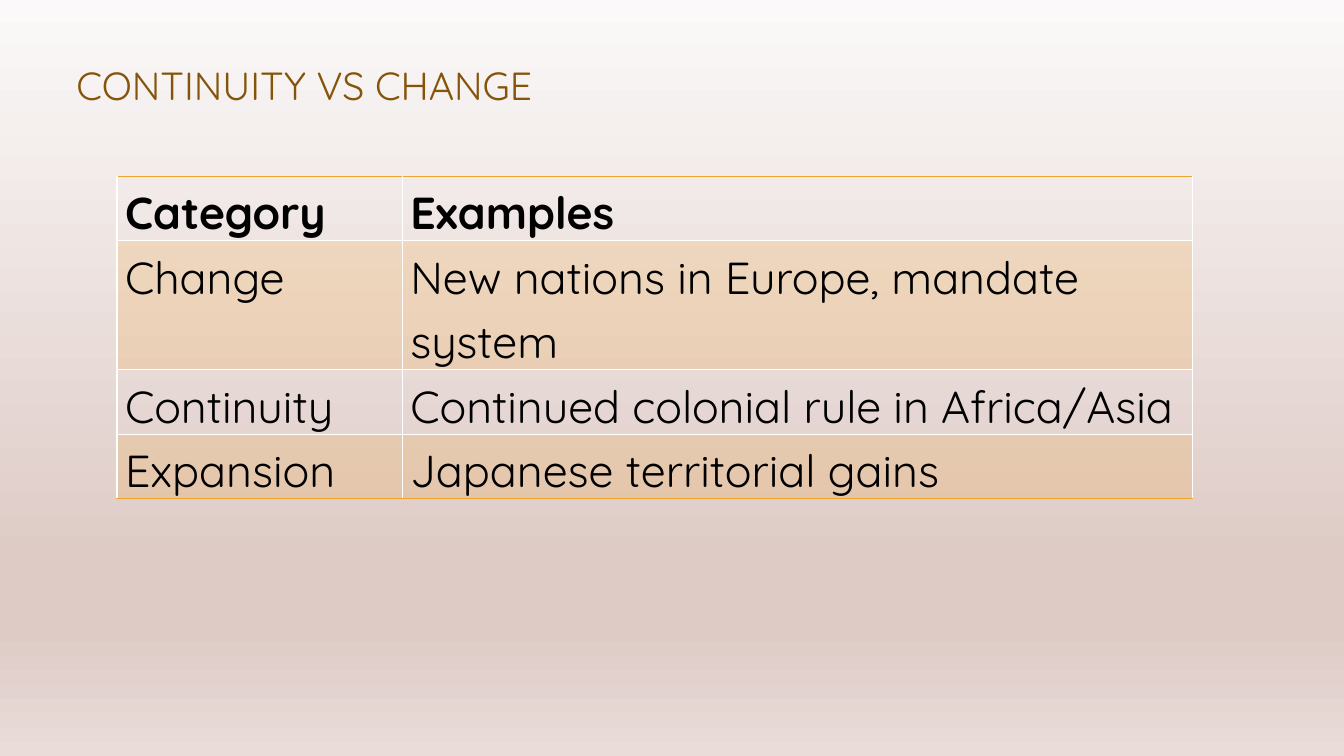
import pptx
import pptx.dml.color
import pptx.enum.text
import pptx.oxml
import pptx.oxml.ns
import pptx.util
from pptx.util import Inches

RGBColor = pptx.dml.color.RGBColor
BROWN = RGBColor(0x85, 0x54, 0x0A)
BLACK = RGBColor(0x00, 0x00, 0x00)
AMBER = RGBColor(0xF0, 0xA2, 0x2E)
BACKDROP_STOPS = [
    (0, RGBColor(0xFB, 0xF9, 0xF9)),
    (74, RGBColor(0xDE, 0xCB, 0xC6)),
    (83, RGBColor(0xDE, 0xCB, 0xC6)),
    (100, RGBColor(0xE9, 0xDC, 0xD9)),
]
FONT = "Quicksand"
LINE_HEIGHT = 0.64
COLUMN_WIDTHS = [2.83, 7.84]
ROWS = [
    ("Category", "Examples", 1),
    ("Change", "New nations in Europe, mandate system", 2),
    ("Continuity", "Continued colonial rule in Africa/Asia", 1),
    ("Expansion", "Japanese territorial gains", 1),
]


def make_element(tag, body, attributes=""):
    namespace = pptx.oxml.ns.nsdecls("a")
    return pptx.oxml.parse_xml(f"<a:{tag} {namespace} {attributes}>{body}</a:{tag}>")


def paint_backdrop(page):
    fill = page.background.fill
    fill.gradient()
    fill.gradient_angle = 270
    stops = next(page.element.iter(pptx.oxml.ns.qn("a:gsLst")))
    for stop in list(stops):
        stops.remove(stop)
    for percent, color in BACKDROP_STOPS:
        stops.append(make_element(
            "gs", f'<a:srgbClr val="{color}"/>', f'pos="{percent * 1000}"'))


def write(para, text, size, color, bold=False):
    span = para.add_run()
    span.text = text
    span.font.name = FONT
    span.font.size = pptx.util.Pt(size)
    span.font.color.rgb = color
    span.font.bold = bold


def add_title(page, left, top, width, height):
    box = page.shapes.add_textbox(left, top, width, height)
    frame = box.text_frame
    frame.word_wrap = True
    frame.vertical_anchor = pptx.enum.text.MSO_ANCHOR.BOTTOM
    para = frame.paragraphs[0]
    para.line_spacing = 0.9
    write(para, "CONTINUITY VS CHANGE", 28, BROWN)


def style_cell(cell, banded, edges):
    properties = cell._tc.get_or_add_tcPr()
    if banded:
        cell.fill.solid()
        cell.fill.fore_color.rgb = AMBER
        color = next(properties.iter(pptx.oxml.ns.qn("a:srgbClr")))
        color.append(make_element("alpha", "", 'val="20000"'))
    else:
        cell.fill.background()
    for position, edge in enumerate(edges):
        line = f'<a:solidFill><a:srgbClr val="{AMBER}"/></a:solidFill>'
        properties.insert(position, make_element(
            edge, line, f'w="{pptx.util.Pt(1)}"'))


def fill_cell(cell, text, bold):
    cell.margin_left = cell.margin_right = Inches(0.08)
    cell.margin_top = cell.margin_bottom = 0
    para = cell.text_frame.paragraphs[0]
    para.line_spacing = 1.15
    para.space_after = pptx.util.Pt(8)
    write(para, text, 32, BLACK, bold)


def add_examples_table(page, left, top, width):
    line_count = sum(lines for _, _, lines in ROWS)
    frame = page.shapes.add_table(
        len(ROWS), len(COLUMN_WIDTHS), left, top, width,
        Inches(LINE_HEIGHT * line_count))
    table = frame.table
    table.first_row = False
    table.horz_banding = False
    for column, column_width in zip(table.columns, COLUMN_WIDTHS):
        column.width = Inches(column_width)
    edges = {0: ["lnT", "lnB"], len(ROWS) - 1: ["lnB"]}
    for index, (category, examples, lines) in enumerate(ROWS):
        table.rows[index].height = Inches(LINE_HEIGHT * lines)
        for cell, text in zip(table.rows[index].cells, (category, examples)):
            style_cell(cell, index % 2 == 1, edges.get(index, []))
            fill_cell(cell, text, index == 0)


def main():
    deck = pptx.Presentation()
    deck.slide_width = Inches(13.33)
    deck.slide_height = Inches(7.5)
    page = deck.slides.add_slide(deck.slide_layouts[6])
    paint_backdrop(page)
    add_title(page, Inches(0.66), Inches(0.25), Inches(11.67), Inches(0.88))
    add_examples_table(
        page, Inches(1.16), Inches(1.75), Inches(sum(COLUMN_WIDTHS)))
    deck.save("out.pptx")


if __name__ == "__main__":
    main()
